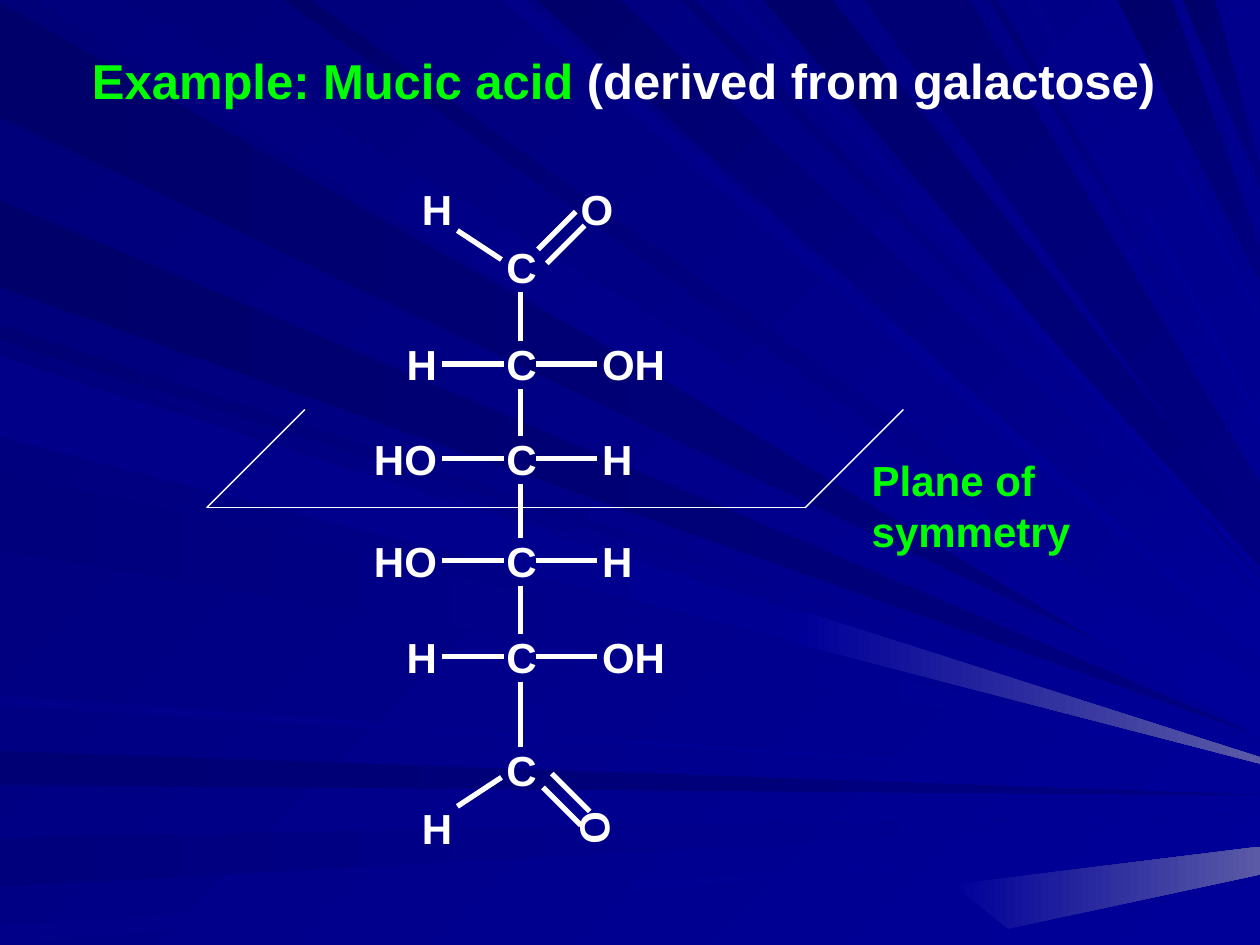
import itertools

import pptx
import pptx.util
import pptx.dml.color
import pptx.enum.shapes
import pptx.enum.text
import pptx.oxml
import pptx.oxml.ns

COLORS = {"text": "FFFFFF", "accent": "00FF00", "deep": "000078", "blue": "000099", "navy": "000080",
          "shadow": "00006B", "dusk": "000074", "dim": "00007D", "light": "000088", "glow": "5A5AA6"}
WIDTH, HEIGHT = 10, 7.5
EMU_PER_UNIT = 9144
UNITS_PER_INCH = 100

# Colours at both ends: rays as start and end on the slide edge, then height of the tip
LEFT_RAYS = {
    ("shadow", "navy"): [(0.02, 0.93, 5.7), (1.59, 2.28, 5.84)],
    ("dusk", "navy"): [(5.96, 6.23, 6.31)],
    ("dusk", "blue"): [(2.58, 2.7, 5.89)],
    ("dim", "blue"): [(6.65, 7.04, 6.47), (2.78, 3.42, 6), (3.74, 4.37, 6.05)],
    ("light", "blue"): [(7.35, 7.5, 6.65), (5.52, 5.6, 6.22), (2.83, 3.47, 6.04)],
}
TOP_RAYS = {
    ("shadow", "navy"): [(6.06, 6.61, 4.45), (8.87, 9.3, 2.1), (9.39, 9.64, 1.4)],
    ("shadow", "blue"): [(4.26, 4.92, 4.93), (2.25, 2.47, 5.5)],
    ("dusk", "navy"): [(6.86, 7.7, 4.09)],
    ("dusk", "blue"): [(5.4, 5.52, 4.63), (7.85, 7.92, 3.57)],
    ("dim", "blue"): [(0.26, 1.01, 5.63)],
    ("light", "blue"): [(3.98, 4.16, 5.18), (5.77, 5.88, 4.54), (8.15, 8.24, 3.35), (8.65, 8.72, 2.53)],
}
TIP_SHARE = 0.3
GLOWS = [[(6.37, 4.85), (6.33, 5.11), (WIDTH, 6.06), (WIDTH, 6.01)],
         [(7.56, 7.02), (8, 7.37), (WIDTH, 6.94), (WIDTH, 6.72)]]

LABEL_WIDTHS = {"C": 0.44, "H": 0.44, "O": 0.46, "HO": 0.7, "OH": 0.7}
LABEL_HEIGHT = 0.5
# Carbon top within the molecule, with the groups on its left and right
CHAIN = [(0.47, None, None), (1.24, "H", "OH"), (1.99, "HO", "H"),
         (2.8, "HO", "H"), (3.56, "H", "OH"), (4.46, None, None)]


def rgb(value):
    return pptx.dml.color.RGBColor.from_string(value)


def set_gradient(fill, first, last, angle):
    fill.gradient()
    fill.gradient_angle = -angle % 360
    for stop, color, position in zip(fill.gradient_stops, (first, last), (0, 1)):
        stop.color.rgb = rgb(COLORS[color])
        stop.position = position


def add_run(paragraph, text, size, color):
    run = paragraph.add_run()
    run.text = text
    font_format = {"name": "Arial", "size": pptx.util.Pt(size), "bold": True}
    for name, value in font_format.items():
        setattr(run.font, name, value)
    run.font.color.rgb = rgb(COLORS[color])


def add_label(shapes, text, left, top, width, color="text", rotation=0):
    box = shapes.add_textbox(*map(pptx.util.Inches, (left, top, width, LABEL_HEIGHT)))
    box.rotation = rotation
    box.text_frame.word_wrap = False
    add_run(box.text_frame.paragraphs[0], text, 24, color)


def add_line(shapes, start_x, start_y, end_x, end_y, weight=3):
    line = shapes.add_connector(pptx.enum.shapes.MSO_CONNECTOR.STRAIGHT,
                                *map(pptx.util.Inches, (start_x, start_y, end_x, end_y)))
    line.line.color.rgb = rgb(COLORS["text"])
    line.line.width = pptx.util.Pt(weight)
    properties = line._element.spPr
    properties.append(pptx.oxml.parse_xml(f'<a:effectLst {pptx.oxml.ns.nsdecls("a")}/>'))


def add_ray(shapes, points, first, last, angle):
    outline = [(x * UNITS_PER_INCH, y * UNITS_PER_INCH) for x, y in points]
    builder = shapes.build_freeform(*outline[0], scale=EMU_PER_UNIT)
    builder.add_line_segments(outline[1:], close=True)
    ray = builder.convert_to_shape()
    ray.shadow.inherit = False
    ray.line.fill.background()
    set_gradient(ray.fill, first, last, angle)


def add_background(slide):
    set_gradient(slide.background.fill, "deep", "blue", 45)
    shapes = slide.shapes.add_group_shape().shapes
    for colors, rays in LEFT_RAYS.items():
        for start, end, tip in rays:
            add_ray(shapes, [(0, start), (0, end), (WIDTH, tip)], *colors, 0)
    for colors, rays in TOP_RAYS.items():
        for start, end, tip in rays:
            spread = (end - start) * TIP_SHARE
            points = [(start, 0), (end, 0), (WIDTH, tip - spread), (WIDTH, tip + spread)]
            add_ray(shapes, points, *colors, 45)
    for points in GLOWS:
        add_ray(shapes, points, "blue", "glow", 0)


def add_title(slide, left, top, width, height):
    title = slide.shapes.title
    box = {"left": left, "top": top, "width": width, "height": height}
    for name, value in box.items():
        setattr(title, name, pptx.util.Inches(value))
    frame = title.text_frame
    frame_format = {"word_wrap": False, "auto_size": pptx.enum.text.MSO_AUTO_SIZE.NONE,
                    "vertical_anchor": pptx.enum.text.MSO_ANCHOR.TOP}
    for name, value in frame_format.items():
        setattr(frame, name, value)
    paragraph = frame.paragraphs[0]
    paragraph.alignment = pptx.enum.text.PP_ALIGN.LEFT
    add_run(paragraph, "Example: Mucic acid", 28, "accent")
    add_run(paragraph, " (derived from galactose)", 28, "text")


def add_aldehyde(shapes, left, middle, side, shift, rotation):
    """Add H and double-bonded O above (side -1) or below (side 1) the carbon's middle."""
    add_line(shapes, left + 0.77, middle + side * 0.29, left + 1.12, middle + side * 0.06)
    for x, y in ((1.41, 0.14), (1.48, 0.03)):
        start = left + x + shift
        add_line(shapes, start, middle + side * y, start + 0.3, middle + side * (y + 0.3))
    label_top = middle + side * 0.46 - LABEL_HEIGHT / 2
    add_label(shapes, "H", left + 0.39, label_top, LABEL_WIDTHS["H"])
    add_label(shapes, "O", left + 1.65, label_top, LABEL_WIDTHS["O"], rotation=rotation)


def add_molecule(slide, left, top):
    shapes = slide.shapes.add_group_shape().shapes
    tops = [top + row[0] for row in CHAIN]
    middles = [carbon_top + LABEL_HEIGHT / 2 for carbon_top in tops]
    for upper, lower in itertools.pairwise(tops):
        add_line(shapes, left + 1.27, upper + 0.45, left + 1.27, lower + 0.07)
    for carbon_top, middle, (_, left_group, right_group) in zip(tops, middles, CHAIN):
        add_label(shapes, "C", left + 1.06, carbon_top, LABEL_WIDTHS["C"])
        if left_group:
            for start in (0.65, 1.39):
                add_line(shapes, left + start, middle, left + start + 0.49, middle)
            width = LABEL_WIDTHS[left_group]
            add_label(shapes, left_group, left + 0.71 - width, carbon_top, width)
            add_label(shapes, right_group, left + 1.82, carbon_top, LABEL_WIDTHS[right_group])
    add_aldehyde(shapes, left, middles[0], -1, 0, 0)
    add_aldehyde(shapes, left, middles[-1], 1, 0.04, 86.8)


def add_symmetry_plane(slide, left, top, width, depth):
    """Draw the open front edge and slanted sides of the plane, with its caption."""
    shapes = slide.shapes.add_group_shape().shapes
    right, bottom = left + width, top + depth
    add_line(shapes, left, bottom, right, bottom, 0.75)
    for corner in (left, right):
        add_line(shapes, corner, bottom, corner + depth, top, 0.75)
    add_label(shapes, "Plane of symmetry", right + 0.43, top + 0.31, 3.16, "accent")


def main():
    presentation = pptx.Presentation()
    presentation.slide_width = pptx.util.Inches(WIDTH)
    presentation.slide_height = pptx.util.Inches(HEIGHT)
    slide = presentation.slides.add_slide(presentation.slide_layouts.get_by_name("Title Only"))
    add_background(slide)
    add_title(slide, 0.63, 0.35, 8.65, 0.57)
    add_molecule(slide, 2.86, 1.4)
    add_symmetry_plane(slide, 1.64, 3.25, 4.75, 0.78)
    # The title sits in front of the rays
    slide.shapes._spTree.append(slide.shapes.title._element)
    presentation.save("out.pptx")


if __name__ == "__main__":
    main()
